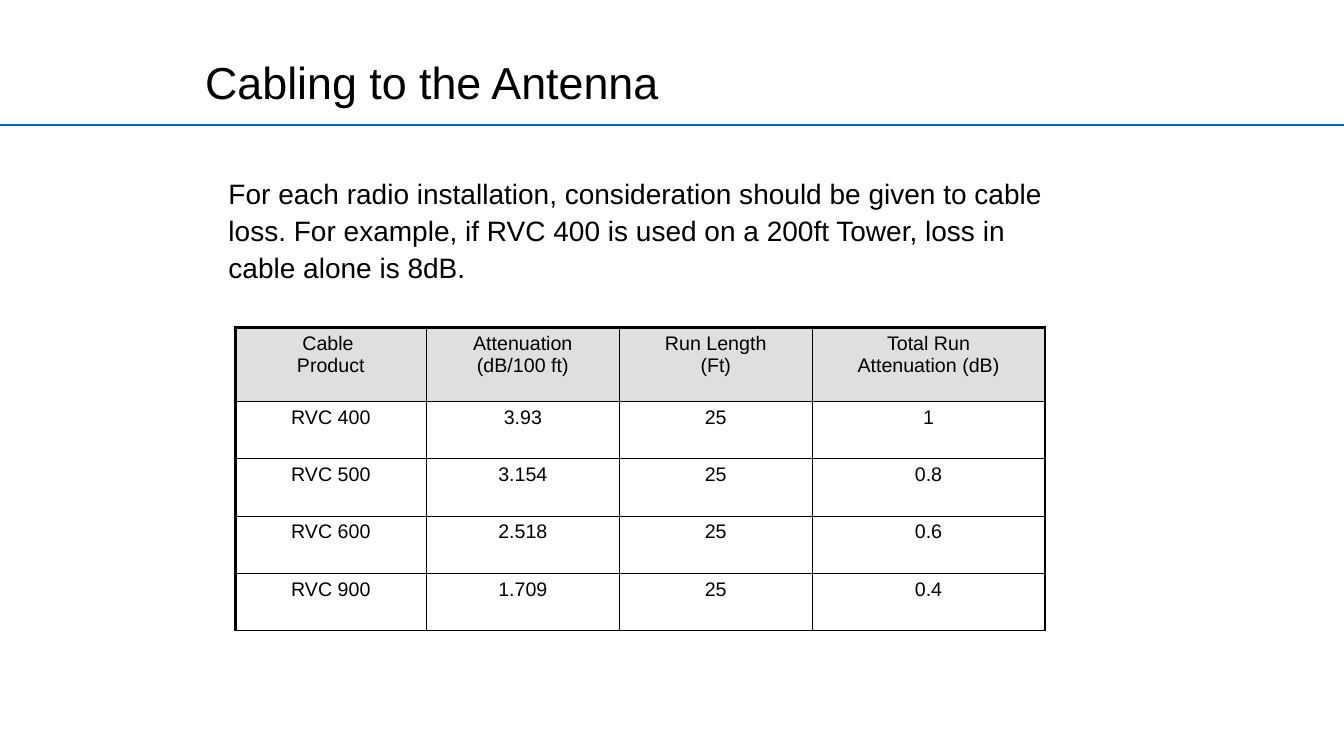
from dataclasses import dataclass

from lxml.etree import SubElement
from pptx import Presentation
from pptx.dml.color import RGBColor
from pptx.enum.shapes import MSO_CONNECTOR
from pptx.enum.text import MSO_ANCHOR, MSO_AUTO_SIZE, PP_ALIGN
from pptx.oxml.ns import qn
from pptx.util import Pt

# Content
TITLE = "Cabling to the Antenna"
INTRO = ("For each radio installation, consideration should be given to cable loss. "
         "For example, if RVC 400 is used on a 200ft Tower, loss in cable alone is 8dB.")
# \v is a line break inside a paragraph
CABLES = [
    ("Cable \vProduct", "Attenuation\v(dB/100 ft)", "Run Length\v(Ft)", "Total Run\vAttenuation (dB)"),
    ("RVC 400", "3.93", "25", "1"),
    ("RVC 500", "3.154", "25", "0.8"),
    ("RVC 600", "2.518", "25", "0.6"),
    ("RVC 900", "1.709", "25", "0.4"),
]


@dataclass(frozen=True)
class Theme:
    font: str = "Arial"
    text: str = "000000"
    rule: str = "0067CD"
    header: str = "C0C0C0"
    header_opacity: int = 50
    title_size: float = 32
    intro_size: float = 20
    table_size: float = 14
    thin: float = 1
    thick: float = 2.25


THEME = Theme()

# Layout, in points
PAGE_WIDTH, PAGE_HEIGHT = 960, 540
TITLE_BOX = (139.3, 31, 358.6, 46.8)
INTRO_BOX = (156, 95.8, 609.8, 138.2)
RULE_TOP = 89.4
TABLE_LEFT, TABLE_TOP = 168, 233.7
COLUMN_WIDTHS = [136.6, 137.8, 137.8, 166.2]
ROW_HEIGHTS = [53] + [41] * (len(CABLES) - 1)


def format_runs(para, size):
    for span in para.runs:
        span.font.name = THEME.font
        span.font.size = Pt(size)
        span.font.bold = False
        span.font.color.rgb = RGBColor.from_string(THEME.text)


def fill_placeholder(box, bounds, text, size, bottom_margin):
    box.left, box.top, box.width, box.height = map(Pt, bounds)
    frame = box.text_frame
    frame.text = text
    frame.auto_size = MSO_AUTO_SIZE.NONE
    frame.vertical_anchor = MSO_ANCHOR.BOTTOM
    frame.margin_bottom = Pt(bottom_margin)
    para = frame.paragraphs[0]
    properties = para._p.get_or_add_pPr()
    properties.set("marL", "0")
    properties.set("indent", "0")
    SubElement(properties, qn("a:buNone"))
    para.alignment = PP_ALIGN.LEFT
    para.line_spacing = 1.1
    para.space_before = Pt(0)
    format_runs(para, size)
    return frame


def set_border(cell, side, width):
    line = SubElement(cell._tc.get_or_add_tcPr(), qn(f"a:ln{side}"), w=str(Pt(width)))
    fill = SubElement(line, qn("a:solidFill"))
    SubElement(fill, qn("a:srgbClr"), val=THEME.text)


deck = Presentation()
deck.slide_width, deck.slide_height = Pt(PAGE_WIDTH), Pt(PAGE_HEIGHT)
page = deck.slides.add_slide(deck.slide_layouts[1])

# Rule under the title
rule = page.shapes.add_connector(
    MSO_CONNECTOR.STRAIGHT, Pt(0), Pt(RULE_TOP), Pt(PAGE_WIDTH), Pt(RULE_TOP))
rule.line.color.rgb = RGBColor.from_string(THEME.rule)
rule.line.width = Pt(1.5)
SubElement(rule._element.spPr, qn("a:effectLst"))

# Title and introduction
title_frame = fill_placeholder(page.shapes.title, TITLE_BOX, TITLE, THEME.title_size, 0)
title_frame.word_wrap = False
fill_placeholder(page.placeholders[1], INTRO_BOX, INTRO, THEME.intro_size, 31.2)

# Cable table
table = page.shapes.add_table(
    len(CABLES), len(COLUMN_WIDTHS), Pt(TABLE_LEFT), Pt(TABLE_TOP),
    Pt(sum(COLUMN_WIDTHS)), Pt(sum(ROW_HEIGHTS))).table
table.horz_banding = False
for column, width in zip(table.columns, COLUMN_WIDTHS):
    column.width = Pt(width)
for row, height in zip(table.rows, ROW_HEIGHTS):
    row.height = Pt(height)

last_column = len(COLUMN_WIDTHS) - 1
for row_index, values in enumerate(CABLES):
    for column_index, value in enumerate(values):
        cell = table.cell(row_index, column_index)
        cell.text_frame.text = value
        para = cell.text_frame.paragraphs[0]
        para.alignment = PP_ALIGN.CENTER
        format_runs(para, THEME.table_size)

        # Heavy outer edge on the left, right and top
        outer = {"L": column_index == 0, "R": column_index == last_column,
                 "T": row_index == 0, "B": False}
        for side, heavy in outer.items():
            set_border(cell, side, THEME.thick if heavy else THEME.thin)

        # Half-transparent header fill
        if row_index == 0:
            cell.fill.solid()
            cell.fill.fore_color.rgb = RGBColor.from_string(THEME.header)
            color = cell._tc.tcPr.find(qn("a:solidFill")).find(qn("a:srgbClr"))
            SubElement(color, qn("a:alpha"), val=str(THEME.header_opacity * 1000))
        else:
            cell.fill.background()

deck.save("out.pptx")
